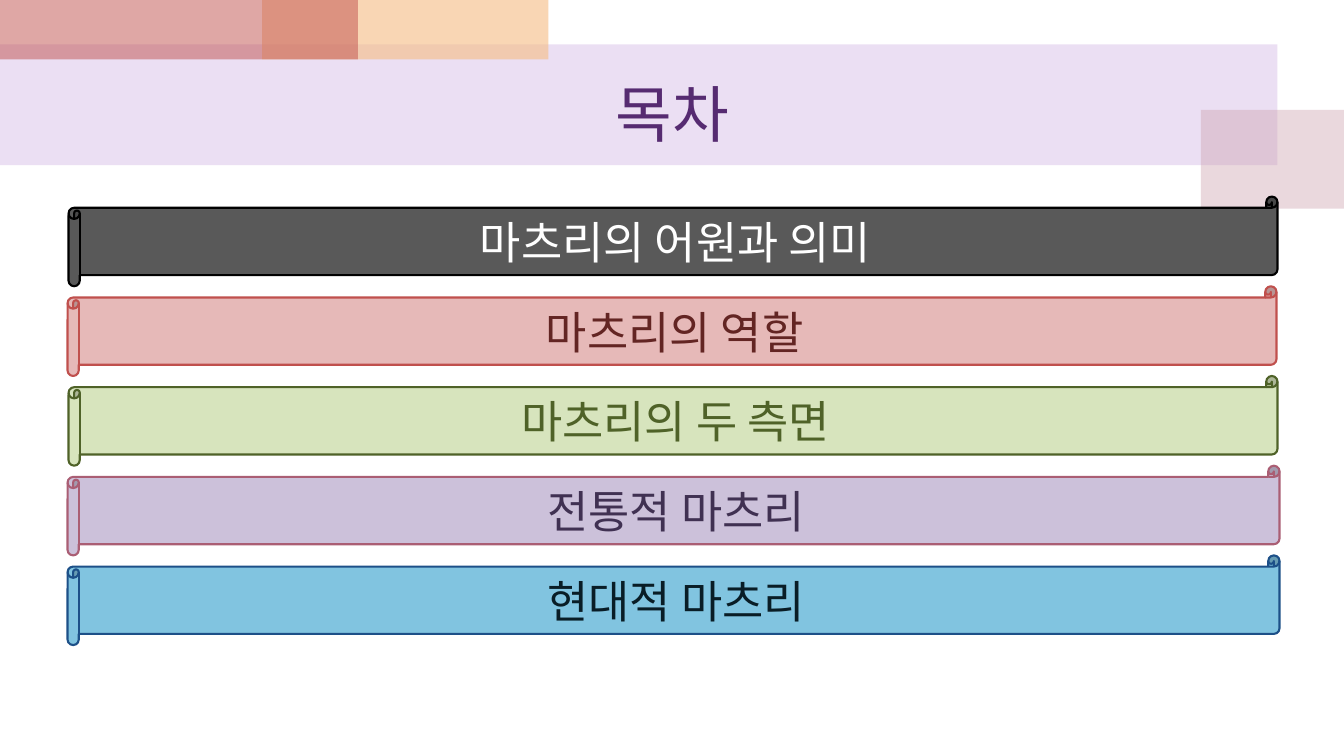
"""Build the contents slide: a title band and five scroll banners."""
from lxml.etree import SubElement
from pptx import Presentation
from pptx.dml.color import RGBColor
from pptx.enum.shapes import MSO_SHAPE
from pptx.enum.text import MSO_ANCHOR, PP_ALIGN
from pptx.oxml.ns import qn
from pptx.util import Inches, Pt


def paint(fill, color, alpha=100):
    fill.solid()
    fill.fore_color.rgb = RGBColor.from_string(color)
    if alpha < 100:
        clr = fill._xPr.find(qn("a:solidFill"))[0]
        SubElement(clr, qn("a:alpha"), val=str(alpha * 1000))


def write(s, text, size, font, color):
    tf = s.text_frame
    tf.word_wrap = True
    tf.vertical_anchor = MSO_ANCHOR.MIDDLE
    p = tf.paragraphs[0]
    p.alignment = PP_ALIGN.CENTER
    r = p.add_run()
    r.text = text
    r.font.size = Pt(size)
    paint(r.font.fill, color)
    r.font.name = font
    SubElement(r.font._element, qn("a:ea"), typeface="Noto Sans CJK KR")


prs = Presentation()
prs.slide_width, prs.slide_height = Inches(13.33), Inches(7.5)
slide = prs.slides.add_slide(prs.slide_layouts[6])

bands = [
    (0, 0.44, 12.67, 1.2, "BF98D8", 30),
    (11.91, 1.09, 1.42, 0.98, "CC9EAC", 40),
    (2.6, 0, 2.84, 0.59, "F5BC83", 60),
    (0, 0, 3.55, 0.59, "C0504D", 50),
]
for *box, color, alpha in bands:
    s = slide.shapes.add_shape(MSO_SHAPE.RECTANGLE, *map(Inches, box))
    s.shadow.inherit = False
    s.line.fill.background()
    paint(s.fill, color, alpha)

margin = 0.67
title = slide.shapes.add_textbox(*map(Inches, (margin, 0.59, 12, 1.05)))
write(title, "목차", 44, "Calibri", "562B71")

top, pitch = 1.95, 0.89
scrolls = [
    ("마츠리의 어원과 의미", 0.68, 11.99, "595959", "000000", "FFFFFF"),
    ("마츠리의 역할", margin, 11.99, "E6B9B8", "C0504D", "632523"),
    ("마츠리의 두 측면", 0.68, 11.99, "D7E4BD", "4F6228", "4F6228"),
    ("전통적 마츠리", margin, 12.02, "CCC1DA", "AA5E74", "403152"),
    ("현대적 마츠리", margin, 12.02, "81C4E0", "1D5088", "091D26"),
]
for i, (text, left, width, fill, line, color) in enumerate(scrolls):
    box = left, top + i * pitch, width, pitch
    s = slide.shapes.add_shape(MSO_SHAPE.HORIZONTAL_SCROLL, *map(Inches, box))
    s.shadow.inherit = False
    paint(s.fill, fill)
    paint(s.line.fill, line)
    s.line.width = Pt(1.5)
    write(s, text, 32, "Noto Sans CJK KR", color)

prs.save("out.pptx")
